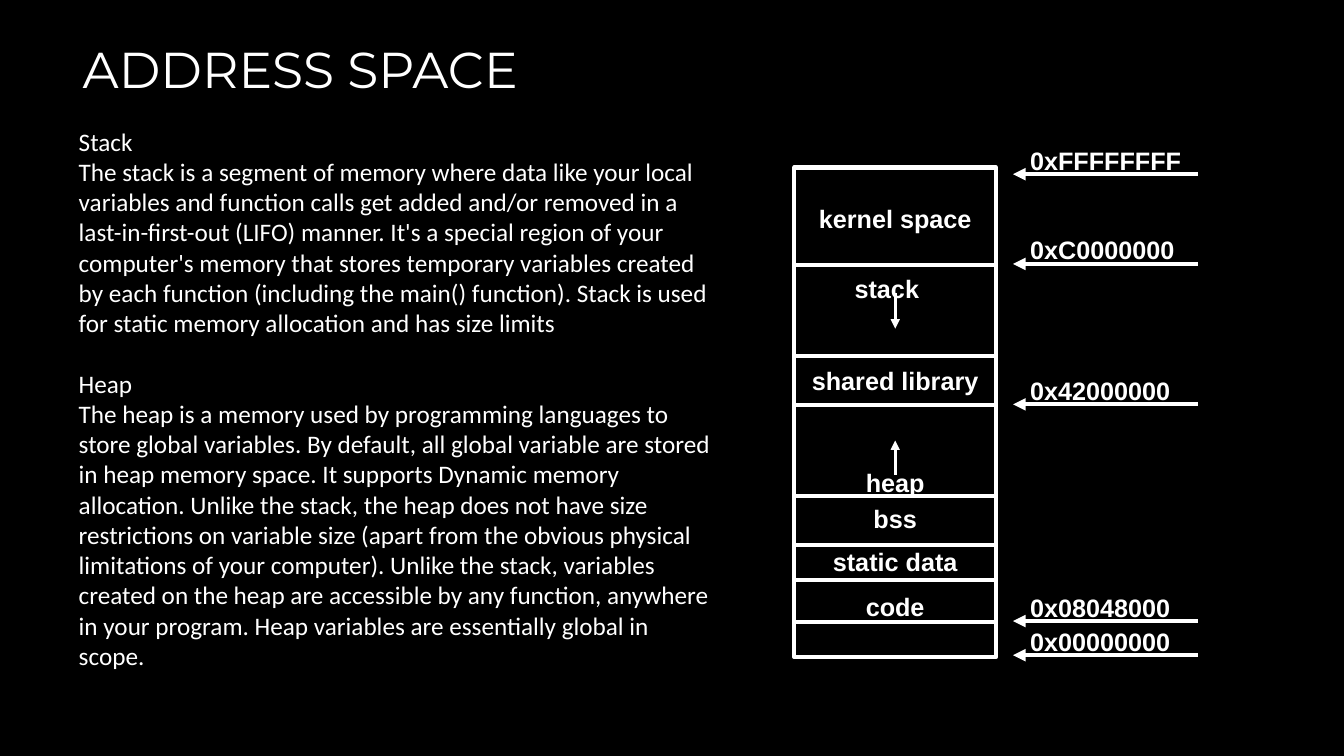
"""Builds the address space slide with its memory map."""
from dataclasses import dataclass

from lxml import etree
from pptx import Presentation
from pptx.dml.color import RGBColor
from pptx.enum.shapes import MSO_CONNECTOR, MSO_SHAPE
from pptx.enum.text import MSO_ANCHOR, MSO_AUTO_SIZE, PP_ALIGN
from pptx.oxml.ns import qn
from pptx.slide import Slide
from pptx.text.text import TextFrame, _Paragraph
from pptx.util import Cm, Pt

LEFT, CENTER = PP_ALIGN.LEFT, PP_ALIGN.CENTER
TOP, MIDDLE = MSO_ANCHOR.TOP, MSO_ANCHOR.MIDDLE
NO_FIT = MSO_AUTO_SIZE.NONE
STRAIGHT = MSO_CONNECTOR.STRAIGHT
RECT = MSO_SHAPE.RECTANGLE


@dataclass(frozen=True)
class Theme:
    back: RGBColor = RGBColor(0, 0, 0)
    ink: RGBColor = RGBColor(255, 255, 255)
    head_font: str = "Montserrat"
    body_font: str = "Calibri"
    map_font: str = "Arial"
    head_size: float = 36
    text_size: float = 18
    thick: float = 3
    thin: float = 2.25


@dataclass(frozen=True)
class Label:
    text: str
    top: float
    shift: float = 0


@dataclass(frozen=True)
class Mark:
    text: str
    y: float


@dataclass(frozen=True)
class Topic:
    name: str
    text: str
    gap: float = 0


@dataclass(frozen=True)
class Growth:
    start: float
    end: float


THEME = Theme()
MAP_LEFT, MAP_TOP, MAP_WIDTH, MAP_HEIGHT = 20.02, 4.22, 5.08, 12.34
MARK_LEFT, MARK_RIGHT, MARK_RISE = 25.53, 30.18, 0.86
LABEL_HEIGHT = 1.02

BOUNDS = (6.68, 8.97, 10.21, 12.5, 13.74, 14.61, 15.67)
LABELS = (
    Label("kernel space", 5),
    Label("stack", 6.76, -0.21),
    Label("shared library", 9.09),
    Label("heap", 11.66),
    Label("bss", 12.57),
    Label("static data", 13.64),
    Label("code", 14.78),
)
MARKS = (
    Mark("0xFFFFFFFF", 4.39),
    Mark("0xC0000000", 6.65),
    Mark("0x42000000", 10.19),
    Mark("0x08048000", 15.65),
    Mark("0x00000000", 16.51),
)
GROWTHS = (Growth(7.39, 8.28), Growth(11.96, 11.1))
TOPICS = (
    Topic(
        "Stack",
        "The stack is a segment of memory where data like your local variables and "
        "function calls get added and/or removed in a last-in-first-out (LIFO) manner. "
        "It's a special region of your computer's memory that stores temporary variables "
        "created by each function (including the main() function). Stack is used for "
        "static memory allocation and has size limits",
        gap=21.6,
    ),
    Topic(
        "Heap",
        "The heap is a memory used by programming languages to store global variables. "
        "By default, all global variable are stored in heap memory space. It supports "
        "Dynamic memory allocation. Unlike the stack, the heap does not have size "
        "restrictions on variable size (apart from the obvious physical limitations of "
        "your computer). Unlike the stack, variables created on the heap are accessible "
        "by any function, anywhere in your program. Heap variables are essentially "
        "global in scope.",
    ),
)


def write(para: _Paragraph, text: str, *, font: str, size: float = THEME.text_size,
          bold: bool = False, align: PP_ALIGN = LEFT, after: float = 0) -> None:
    run = para.add_run()
    run.text = text
    run.font.name, run.font.size, run.font.bold = font, Pt(size), bold
    run.font.color.rgb = THEME.ink
    para.alignment = align
    para.space_before, para.space_after = Pt(0), Pt(after)


def set_frame(frame: TextFrame, anchor: MSO_ANCHOR = TOP) -> None:
    frame.word_wrap = True
    frame.auto_size = NO_FIT
    frame.vertical_anchor = anchor


def drop_bullet(para: _Paragraph) -> None:
    props = para._p.get_or_add_pPr()
    props.set("marL", "0")
    props.set("indent", "0")
    etree.SubElement(props, qn("a:buNone"))


def add_label(slide: Slide, text: str, left: float, top: float, align: PP_ALIGN) -> None:
    box = slide.shapes.add_textbox(Cm(left), Cm(top), Cm(MAP_WIDTH), Cm(LABEL_HEIGHT))
    set_frame(box.text_frame)
    write(box.text_frame.paragraphs[0], text, font=THEME.map_font, bold=True, align=align)


def add_line(slide: Slide, start: tuple[float, float], end: tuple[float, float],
             width: float = THEME.thick, arrow: bool = False) -> None:
    line = slide.shapes.add_connector(STRAIGHT, *map(Cm, start + end))
    line.line.color.rgb = THEME.ink
    line.line.width = Pt(width)
    if arrow:
        etree.SubElement(line.line._get_or_add_ln(), qn("a:tailEnd"), type="triangle")
    etree.SubElement(line._element.spPr, qn("a:effectLst"))


def add_prose(slide: Slide) -> None:
    title, body = slide.placeholders
    title.left, title.top, title.width, title.height = map(Cm, (1.83, 0.76, 23.32, 1.9))
    set_frame(title.text_frame, MIDDLE)
    write(title.text_frame.paragraphs[0], "ADDRESS SPACE",
          font=THEME.head_font, size=THEME.head_size)

    body.left, body.top, body.width, body.height = map(Cm, (1.73, 3.05, 16.61, 14.1))
    frame = body.text_frame
    set_frame(frame)
    for spot, topic in enumerate(TOPICS):
        name = frame.add_paragraph() if spot else frame.paragraphs[0]
        prose = frame.add_paragraph()
        write(name, topic.name, font=THEME.body_font)
        write(prose, topic.text, font=THEME.body_font, after=topic.gap)
        drop_bullet(name)
        drop_bullet(prose)


def add_map(slide: Slide) -> None:
    frame = slide.shapes.add_shape(
        RECT, *map(Cm, (MAP_LEFT, MAP_TOP, MAP_WIDTH, MAP_HEIGHT)))
    frame.shadow.inherit = False
    frame.fill.background()
    frame.line.color.rgb = THEME.ink
    frame.line.width = Pt(THEME.thick)
    for y in BOUNDS:
        add_line(slide, (MAP_LEFT, y), (MAP_LEFT + MAP_WIDTH, y))
    for label in LABELS:
        add_label(slide, label.text, MAP_LEFT + label.shift, label.top, CENTER)
    mid = MAP_LEFT + MAP_WIDTH / 2
    for growth in GROWTHS:
        add_line(slide, (mid, growth.start), (mid, growth.end), THEME.thin, arrow=True)
    for mark in MARKS:
        add_line(slide, (MARK_RIGHT, mark.y), (MARK_LEFT, mark.y), arrow=True)
        add_label(slide, mark.text, MARK_LEFT + 0.18, mark.y - MARK_RISE, LEFT)


def main() -> None:
    deck = Presentation()
    deck.slide_width, deck.slide_height = Cm(33.87), Cm(19.05)
    slide = deck.slides.add_slide(deck.slide_layouts[1])
    slide.background.fill.solid()
    slide.background.fill.fore_color.rgb = THEME.back
    add_prose(slide)
    add_map(slide)
    deck.save("out.pptx")


if __name__ == "__main__":
    main()
